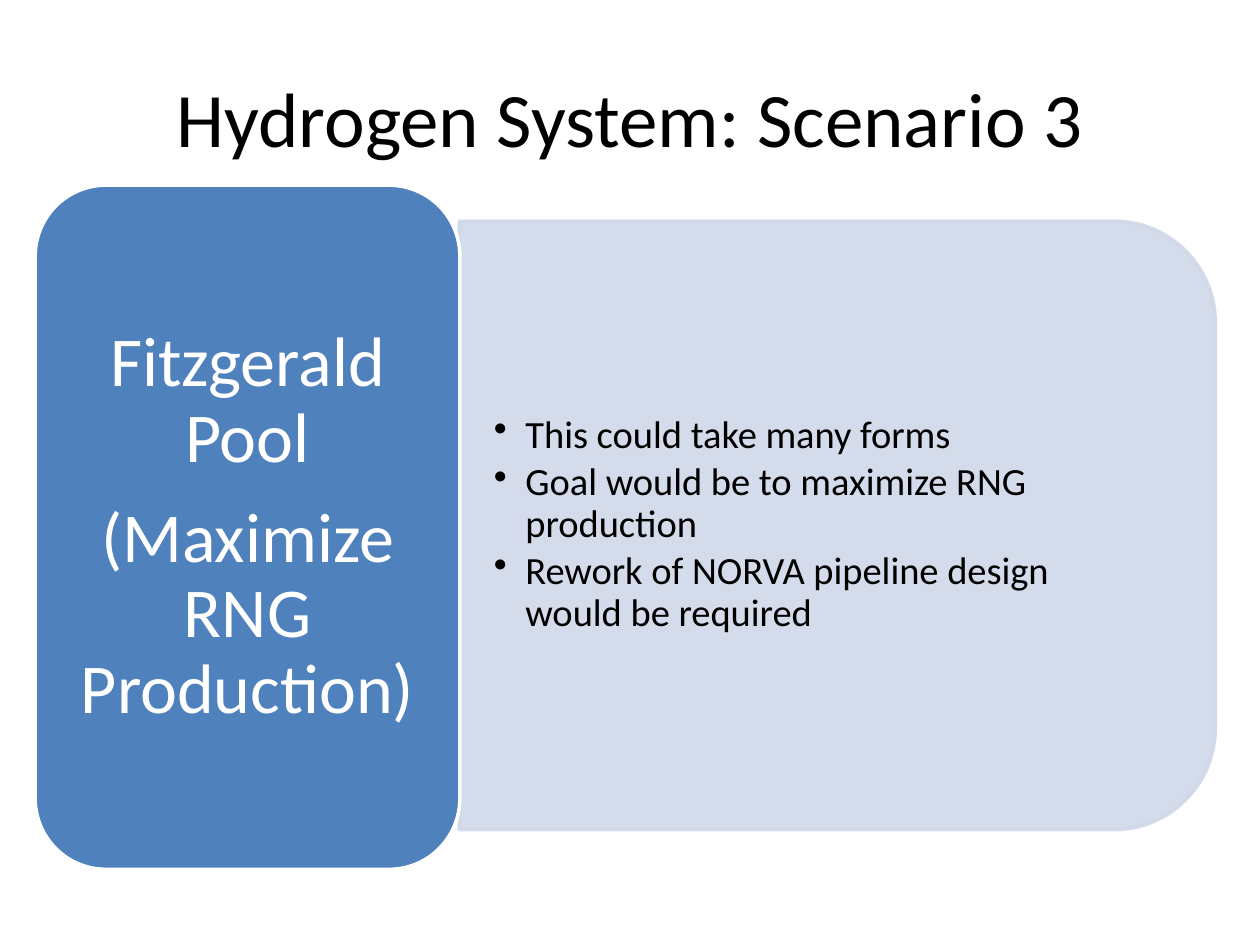
from pptx import Presentation
from pptx.util import Inches, Pt
from pptx.dml.color import RGBColor
from pptx.enum import shapes, text
from pptx.oxml import parse_xml
from pptx.oxml.ns import nsdecls

THEME = {
    "font": "Calibri",
    "ink": RGBColor.from_string("000000"),
    "paper": RGBColor.from_string("FFFFFF"),
    "accent": RGBColor.from_string("4F81BD"),
    "tint": RGBColor.from_string("D0D8E8"),
    "title_size": 44, "label_size": 40, "bullet_size": 22, "line": 2,
}
CELL = Inches(0.1)


def grid(*cells):
    return [int(CELL * cell) for cell in cells]


def write(shape, lines, size, color, align, insets=(0.1, 0.05), spacing=1.0, after=0):
    frame = shape.text_frame
    frame.word_wrap = True
    frame.vertical_anchor = text.MSO_ANCHOR.MIDDLE
    frame.margin_left = frame.margin_right = Inches(insets[0])
    frame.margin_top = frame.margin_bottom = Inches(insets[1])
    frame.text = "\n".join(lines)
    for para in frame.paragraphs:
        para.alignment = align
        para.line_spacing = spacing
        para.space_after = Pt(size * after)
        for span in para.runs:
            span.font.name = THEME["font"]
            span.font.size = Pt(size)
            span.font.color.rgb = color
    return frame.paragraphs


deck = Presentation()
deck.slide_width, deck.slide_height = grid(100, 75)
page = deck.slides.add_slide(deck.slide_layouts[6])

title = page.shapes.add_textbox(*grid(5, 3, 90, 12.5))
write(title, ["Hydrogen System: Scenario 3"], THEME["title_size"], THEME["ink"],
      text.PP_ALIGN.CENTER)

panel = page.shapes.add_shape(shapes.MSO_SHAPE.ROUND_2_SAME_RECTANGLE,
                              *grid(42.3, 11.7, 48.3, 60))
panel.rotation = 90
label = page.shapes.add_shape(shapes.MSO_SHAPE.ROUNDED_RECTANGLE,
                              *grid(2.8, 14.7, 33.7, 54.3))
for shape, fill, line in ((panel, "tint", "tint"), (label, "accent", "paper")):
    shape.shadow.inherit = False
    shape.fill.solid()
    shape.fill.fore_color.rgb = THEME[fill]
    shape.line.color.rgb = THEME[line]
    shape.line.width = Pt(THEME["line"])
for color in panel._element.spPr.xpath(".//a:srgbClr"):
    color.append(parse_xml(f'<a:alpha {nsdecls("a")} val="90000"/>'))

write(label, ["Fitzgerald Pool", "(Maximize RNG Production)"], THEME["label_size"],
      THEME["paper"], text.PP_ALIGN.CENTER, (0.17, 0.08), 0.9, 0.35)

notes = page.shapes.add_textbox(*grid(36.5, 19.9, 57.6, 43.5))
bullets = write(notes, [
    "This could take many forms",
    "Goal would be to maximize RNG production",
    "Rework of NORVA pipeline design would be required",
], THEME["bullet_size"], THEME["ink"], text.PP_ALIGN.LEFT, (0.27, 0.14), 0.9, 0.15)
for para in bullets:
    properties = para._p.get_or_add_pPr()
    properties.set("marL", str(Inches(0.25)))
    properties.set("indent", str(-Inches(0.25)))
    properties.append(parse_xml(f'<a:buChar {nsdecls("a")} char="•"/>'))

deck.save("out.pptx")
